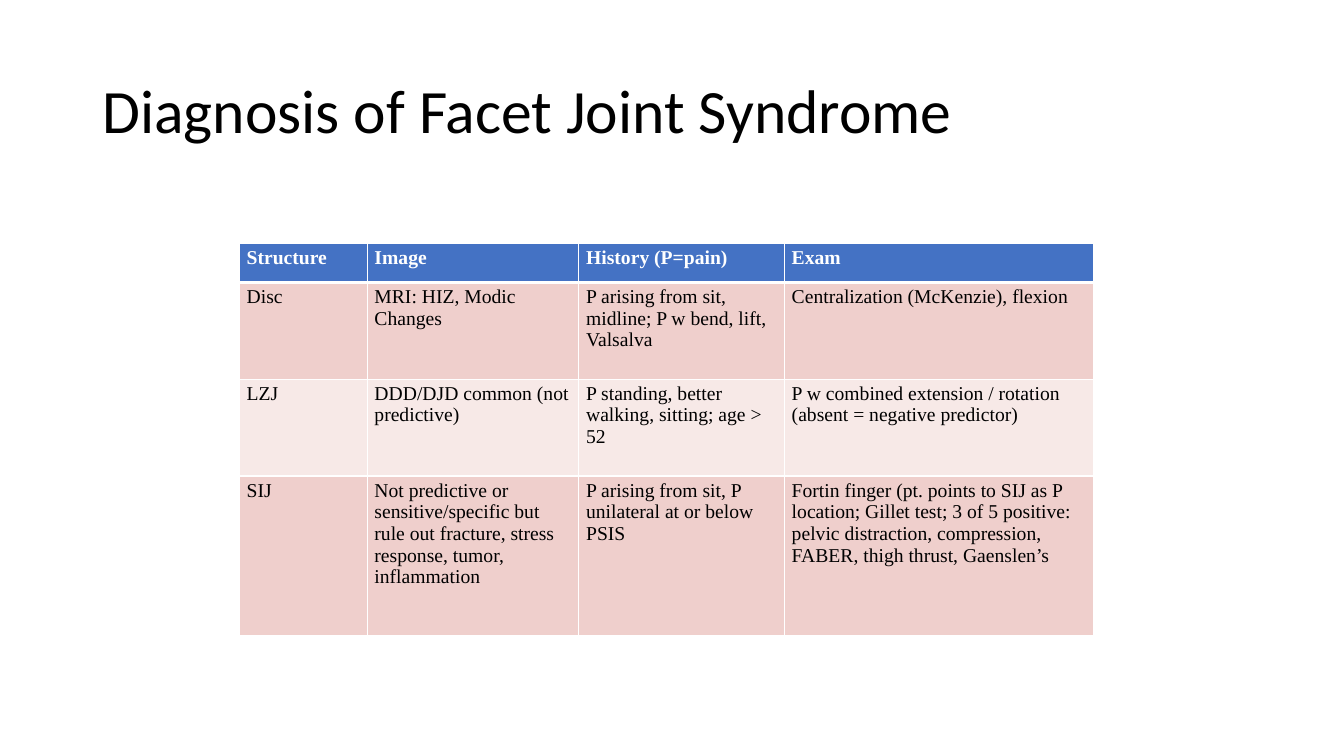
from lxml import etree
from pptx import Presentation
from pptx.dml.color import RGBColor
from pptx.enum.text import MSO_ANCHOR, PP_ALIGN
from pptx.oxml.ns import qn
from pptx.util import Pt

MIDDLE, TOP = MSO_ANCHOR.MIDDLE, MSO_ANCHOR.TOP
LEFT = PP_ALIGN.LEFT
TITLE_ONLY = 5

COLORS = {
    "text": "000000",
    "rule": "FFFFFF",
    "header": "4472C4",
    "header_text": "FFFFFF",
    "odd_row": "EFCFCC",
    "even_row": "F7E9E7",
}
TITLE_FONT, TABLE_FONT = "Calibri", "Times New Roman"
THIN_RULE, HEADER_RULE = 1, 3

COLUMN_WIDTHS = [91.3, 151.2, 146.9, 221]
ROW_HEIGHTS = [28.1, 69.1, 69.1, 113.8]
DIAGNOSIS_ROWS = [
    ["Structure", "Image", "History (P=pain)", "Exam"],
    ["Disc", "MRI: HIZ, Modic Changes",
     "P arising from sit, midline; P w bend, lift, Valsalva",
     "Centralization (McKenzie), flexion"],
    ["LZJ", "DDD/DJD common (not predictive)",
     "P standing, better walking, sitting; age > 52",
     "P w combined extension / rotation (absent = negative predictor)"],
    ["SIJ",
     "Not predictive or sensitive/specific but rule out fracture, "
     "stress response, tumor, inflammation",
     "P arising from sit, P unilateral at or below PSIS",
     "Fortin finger (pt. points to SIJ as P location; Gillet test; "
     "3 of 5 positive: pelvic distraction, compression, FABER, "
     "thigh thrust, Gaenslen’s"],
]


def rgb(name):
    return RGBColor.from_string(COLORS[name])


def format_font(font, face, size, color, bold=False):
    font.name, font.size, font.bold = face, Pt(size), bold
    font.color.rgb = rgb(color)


def set_borders(cell, top, bottom):
    """Draw the four cell borders; they must come before the fill."""
    properties = cell._tc.get_or_add_tcPr()
    sides = {"lnL": THIN_RULE, "lnR": THIN_RULE, "lnT": top, "lnB": bottom}
    for position, (side, width) in enumerate(sides.items()):
        line = etree.Element(qn(f"a:{side}"), w=str(Pt(width)))
        fill = etree.SubElement(line, qn("a:solidFill"))
        etree.SubElement(fill, qn("a:srgbClr"), val=COLORS["rule"])
        properties.insert(position, line)


def place_title(slide, text, left, top, width, height):
    title = slide.shapes.title
    title.left, title.top = Pt(left), Pt(top)
    title.width, title.height = Pt(width), Pt(height)
    frame = title.text_frame
    frame.text = text
    frame.vertical_anchor = MIDDLE
    heading = frame.paragraphs[0]
    heading.alignment, heading.line_spacing = LEFT, 0.9
    format_font(heading.runs[0].font, TITLE_FONT, 44, "text")


def format_cell(cell, text, row_number):
    is_header = row_number == 0
    cell.text = text
    cell.vertical_anchor = TOP
    cell.margin_left = cell.margin_right = Pt(5.2)
    cell.margin_top = cell.margin_bottom = Pt(2.6)
    cell.fill.solid()
    band = "odd_row" if row_number % 2 else "even_row"
    cell.fill.fore_color.rgb = rgb("header" if is_header else band)
    set_borders(cell,
                top=HEADER_RULE if row_number == 1 else THIN_RULE,
                bottom=HEADER_RULE if is_header else THIN_RULE)
    format_font(cell.text_frame.paragraphs[0].runs[0].font, TABLE_FONT, 14,
                "header_text" if is_header else "text", bold=is_header)


def place_diagnosis_table(slide, left, top):
    table = slide.shapes.add_table(
        len(ROW_HEIGHTS), len(COLUMN_WIDTHS), Pt(left), Pt(top),
        Pt(sum(COLUMN_WIDTHS)), Pt(sum(ROW_HEIGHTS))).table
    for column, width in zip(table.columns, COLUMN_WIDTHS):
        column.width = Pt(width)
    for row_number, texts in enumerate(DIAGNOSIS_ROWS):
        table.rows[row_number].height = Pt(ROW_HEIGHTS[row_number])
        for column_number, text in enumerate(texts):
            format_cell(table.cell(row_number, column_number), text, row_number)


def main():
    deck = Presentation()
    deck.slide_width, deck.slide_height = Pt(960), Pt(540)
    slide = deck.slides.add_slide(deck.slide_layouts[TITLE_ONLY])

    # Heading
    place_title(slide, "Diagnosis of Facet Joint Syndrome", 66, 28.75, 828, 104.4)
    # Findings by pain source
    place_diagnosis_table(slide, 171, 173.7)

    deck.save("out.pptx")


if __name__ == "__main__":
    main()
